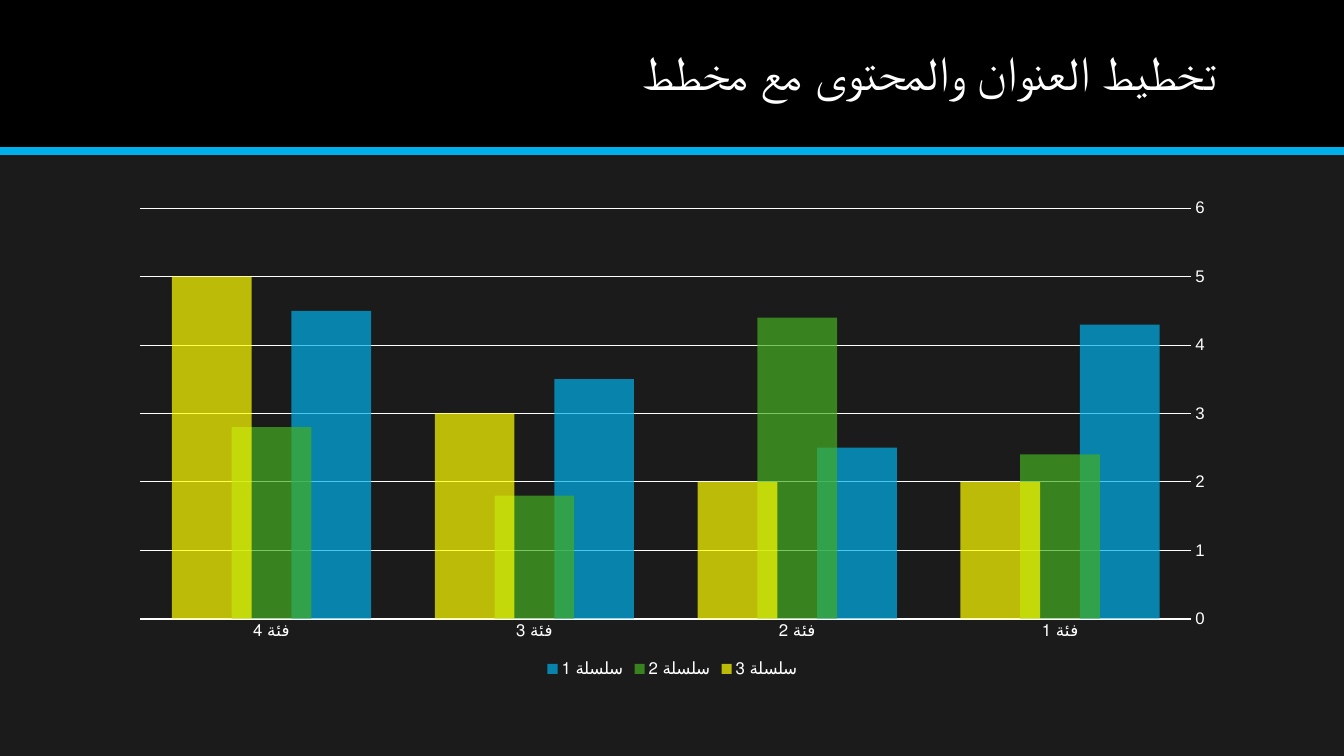
import pptx
import pptx.chart.data
import pptx.dml.color
import pptx.enum.chart
import pptx.enum.shapes
import pptx.enum.text
import pptx.oxml.ns
import pptx.util
from lxml import etree

Inches = pptx.util.Inches
Pt = pptx.util.Pt
RGBColor = pptx.dml.color.RGBColor
qn = pptx.oxml.ns.qn

BLACK = RGBColor(0x00, 0x00, 0x00)
WHITE = RGBColor(0xFF, 0xFF, 0xFF)
DARK = RGBColor(0x1B, 0x1B, 0x1B)
BLUE = RGBColor(0x00, 0xB0, 0xEA)
GREEN = RGBColor(0x45, 0xAE, 0x22)
YELLOW = RGBColor(0xFF, 0xFF, 0x00)
FACE = "Arial"

WIDE, HIGH = 13.33, 7.5
LEFT, SPAN = 1.17, 11
TITLE = "تخطيط العنوان والمحتوى مع مخطط"
GROUPS = ["فئة 1", "فئة 2", "فئة 3", "فئة 4"]
SERIES = [
    ("سلسلة 1", (4.3, 2.5, 3.5, 4.5), BLUE),
    ("سلسلة 2", (2.4, 4.4, 1.8, 2.8), GREEN),
    ("سلسلة 3", (2, 2, 3, 5), YELLOW),
]


def style(font, size):
    font.name = FACE
    font.size = Pt(size)
    font.color.rgb = WHITE


def add_band(slide, x, y, w, h):
    """Draw the black header with its blue rule and the right-to-left title."""
    band = slide.shapes.add_shape(
        pptx.enum.shapes.MSO_SHAPE.RECTANGLE,
        Inches(x), Inches(y), Inches(w), Inches(h))
    band.shadow.inherit = False
    band.fill.solid()
    band.fill.fore_color.rgb = BLACK
    band.line.fill.background()

    rule = slide.shapes.add_connector(
        pptx.enum.shapes.MSO_CONNECTOR.STRAIGHT,
        Inches(x), Inches(y + h), Inches(x + w), Inches(y + h))
    rule.line.color.rgb = BLUE
    rule.line.width = Pt(6)
    etree.SubElement(rule._element.spPr, qn("a:effectLst"))

    box = slide.shapes.add_textbox(
        Inches(x + LEFT), Inches(y + 0.14), Inches(SPAN), Inches(1.2))
    frame = box.text_frame
    frame.word_wrap = True
    frame.vertical_anchor = pptx.enum.text.MSO_ANCHOR.MIDDLE
    para = frame.paragraphs[0]
    para.alignment = pptx.enum.text.PP_ALIGN.RIGHT
    para.line_spacing = 0.9
    para._p.get_or_add_pPr().set("rtl", "1")
    run = para.add_run()
    run.text = TITLE
    style(run.font, 34)
    etree.SubElement(run._r.rPr, qn("a:cs"), typeface=FACE)


def style_axes(chart):
    ticks = pptx.enum.chart.XL_TICK_MARK
    for axis in (chart.category_axis, chart.value_axis):
        axis.major_tick_mark = ticks.NONE
        axis.minor_tick_mark = ticks.NONE
        style(axis.tick_labels.font, 12)

    groups = chart.category_axis
    groups.reverse_order = True
    groups.format.line.color.rgb = WHITE
    groups.format.line.width = Pt(1.25)

    values = chart.value_axis
    values.minimum_scale = 0
    values.maximum_scale = 6
    values.major_unit = 1
    values.format.line.fill.background()
    values.has_major_gridlines = True
    grid = values.major_gridlines.format.line
    grid.color.rgb = WHITE
    grid.width = Pt(0.75)


def add_bars(slide, x, y, w, h):
    """Draw the clustered chart, running from right to left."""
    data = pptx.chart.data.CategoryChartData()
    data.categories = GROUPS
    for name, values, _ in SERIES:
        data.add_series(name, values)
    chart = slide.shapes.add_chart(
        pptx.enum.chart.XL_CHART_TYPE.COLUMN_CLUSTERED,
        Inches(x), Inches(y), Inches(w), Inches(h), data).chart
    style(chart.font, 10)
    chart.has_title = False
    style_axes(chart)

    chart.has_legend = True
    chart.legend.position = pptx.enum.chart.XL_LEGEND_POSITION.BOTTOM
    chart.legend.include_in_layout = False
    style(chart.legend.font, 12)

    plot = chart.plots[0]
    plot.vary_by_categories = False
    plot.gap_width = 80
    plot.overlap = 25
    for bars, (_, _, color) in zip(plot.series, SERIES):
        bars.invert_if_negative = False
        bars.format.fill.solid()
        bars.format.fill.fore_color.rgb = color
        tint = bars._element.spPr.find(".//" + qn("a:srgbClr"))
        etree.SubElement(tint, qn("a:alpha"), val="70000")


def main():
    deck = pptx.Presentation()
    deck.slide_width = Inches(WIDE)
    deck.slide_height = Inches(HIGH)
    slide = deck.slides.add_slide(deck.slide_layouts[6])
    slide.background.fill.solid()
    slide.background.fill.fore_color.rgb = DARK
    add_band(slide, 0, 0, WIDE, 1.5)
    add_bars(slide, LEFT, 1.88, SPAN, 4.88)
    deck.save("out.pptx")


if __name__ == "__main__":
    main()
